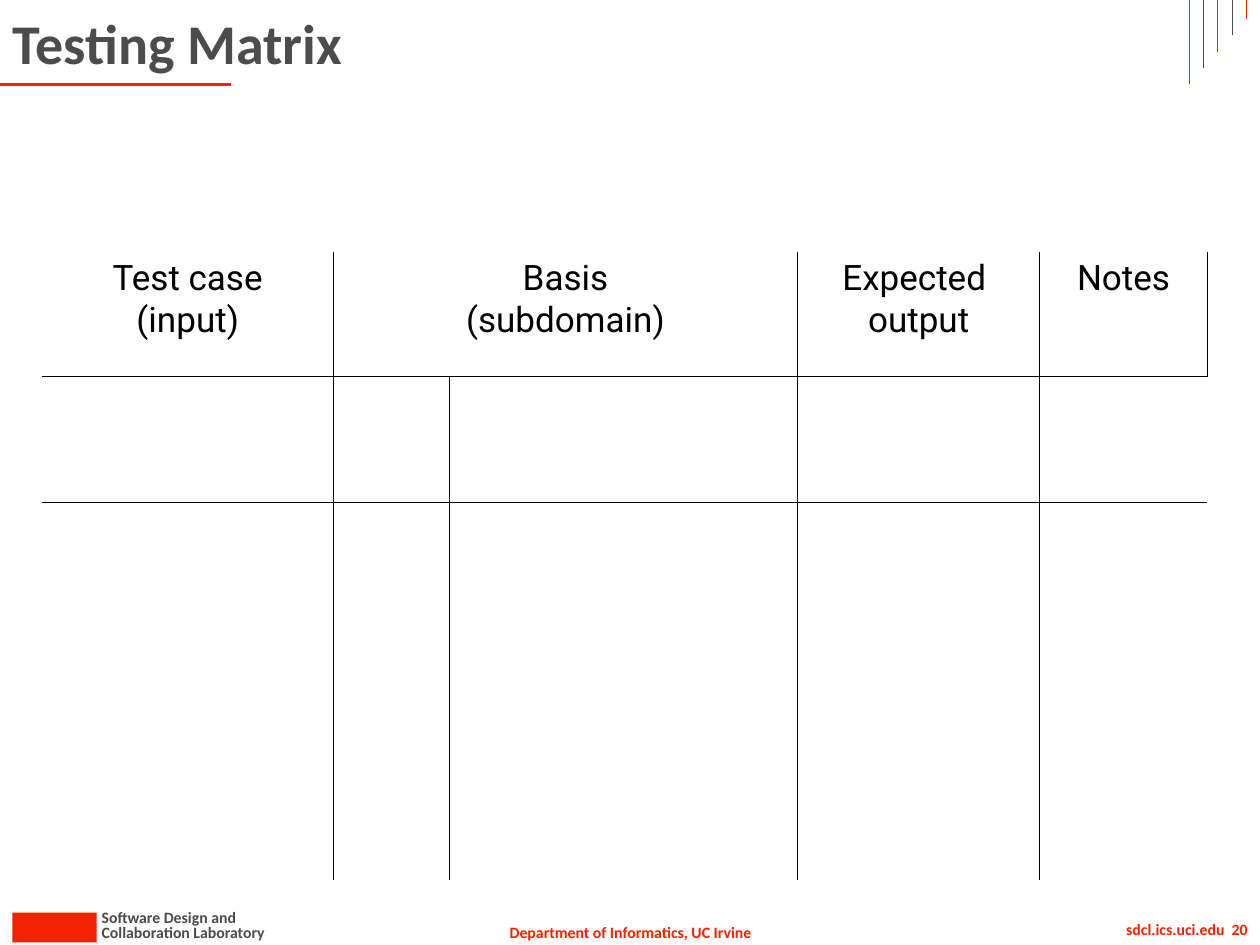
from dataclasses import dataclass
from lxml.etree import SubElement
from pptx import Presentation
from pptx.dml.color import RGBColor
from pptx.enum.shapes import MSO_CONNECTOR, MSO_SHAPE
from pptx.enum.text import MSO_ANCHOR, MSO_AUTO_SIZE, PP_ALIGN
from pptx.oxml.ns import qn
from pptx.util import Cm, Pt


@dataclass(frozen=True)
class Theme:
    red = RGBColor.from_string("F32200")
    grey = RGBColor.from_string("4C4C4C")
    black = RGBColor.from_string("000000")
    font = "Calibri"
    table_font = "Roboto"
    title_size = Pt(32)
    header_size = Pt(20)
    footer_size = Pt(9)


def add_line(x1, y1, x2, y2, color, width):
    line = s.shapes.add_connector(MSO_CONNECTOR.STRAIGHT, Cm(x1), Cm(y1), Cm(x2), Cm(y2))
    line.line.color.rgb = color
    line.line.width = Pt(width)
    SubElement(line._element.spPr, qn("a:effectLst"))


def add_border(cell, side):
    ln = SubElement(cell._tc.get_or_add_tcPr(), qn(f"a:ln{side}"), w=str(Pt(1)))
    fill = SubElement(ln, qn("a:solidFill"))
    SubElement(fill, qn("a:srgbClr"), val=str(theme.black))


theme = Theme()
prs = Presentation()
prs.slide_width, prs.slide_height = Cm(25.4), Cm(19.05)
s = prs.slides.add_slide(prs.slide_layouts[5])

title = s.shapes.title
title.left, title.top, title.width, title.height = Cm(0), Cm(0), Cm(22.86), Cm(1.7)
tf = title.text_frame
tf.text = "Testing Matrix"
tf.auto_size = MSO_AUTO_SIZE.NONE
tf.vertical_anchor = MSO_ANCHOR.MIDDLE
p = tf.paragraphs[0]
p.alignment = PP_ALIGN.LEFT
p.font.name, p.font.size, p.font.bold = theme.font, theme.title_size, True
p.font.color.rgb = theme.grey

block = s.shapes.add_shape(MSO_SHAPE.RECTANGLE, Cm(0.25), Cm(18.4), Cm(1.7), Cm(0.6))
block.shadow.inherit = False
block.fill.solid()
block.fill.fore_color.rgb = theme.red
block.line.fill.background()

footers = [
    ("Department of Informatics, UC Irvine", 9.98, 18.47, 5.46, PP_ALIGN.CENTER, theme.red, False),
    ("Collaboration Laboratory", 1.8, 18.47, 3.89, PP_ALIGN.LEFT, theme.grey, False),
    ("Software Design and", 1.8, 18.17, 3.28, PP_ALIGN.LEFT, theme.grey, False),
    ("sdcl.ics.uci.edu  20", 19.91, 18.41, 5.49, PP_ALIGN.RIGHT, theme.red, True),
]
for text, x, y, w, align, color, wrap in footers:
    tf = s.shapes.add_textbox(Cm(x), Cm(y), Cm(w), Cm(0.64)).text_frame
    tf.word_wrap = wrap
    tf.auto_size = MSO_AUTO_SIZE.SHAPE_TO_FIT_TEXT
    tf.text = text
    p = tf.paragraphs[0]
    p.alignment = align
    p.font.name, p.font.size, p.font.bold = theme.font, theme.footer_size, True
    p.font.color.rgb = color

add_line(0, 1.7, 4.65, 1.7, theme.red, 1.5)
for i in range(5):
    x = 23.98 + i * 0.285
    add_line(x, 1.7 - i * 0.33, x, 0, theme.grey if i % 2 else theme.red, 0.5)

widths = [5.87, 2.34, 2.34, 2.34, 2.34, 4.88, 3.38]
frame = s.shapes.add_table(5, len(widths), Cm(0.85), Cm(5.08), Cm(sum(widths)), Cm(12.67))
table = frame.table
table.first_row = table.horz_banding = False
no_style = "{2D5ABB26-0587-4C30-8999-92F81FD0307C}"
table._tbl.tblPr.find(qn("a:tableStyleId")).text = no_style
for column, width in zip(table.columns, widths):
    column.width = Cm(width)
for row in table.rows:
    row.height = Cm(2.54)
table.rows[0].height = Cm(2.51)
table.cell(0, 1).merge(table.cell(0, 4))

ruled_columns = (0, 4, 5)
for r in range(5):
    for c in range(len(widths)):
        cell = table.cell(r, c)
        if c - 1 in ruled_columns:
            add_border(cell, "L")
        if c in ruled_columns or (r == 0 and c == 1):
            add_border(cell, "R")
        if r == 1:
            add_border(cell, "T")
        if r == 0:
            add_border(cell, "B")
        cell.fill.background()

headers = {0: "Test case\v(input)", 1: "Basis\v(subdomain)", 5: "Expected \voutput", 6: "Notes"}
for c, text in headers.items():
    tf = table.cell(0, c).text_frame
    tf.text = text
    p = tf.paragraphs[0]
    p.alignment = PP_ALIGN.CENTER
    p.space_before = Pt(4)
    p.font.name, p.font.size = theme.table_font, theme.header_size
    p.font.color.rgb = theme.black

prs.save("out.pptx")
